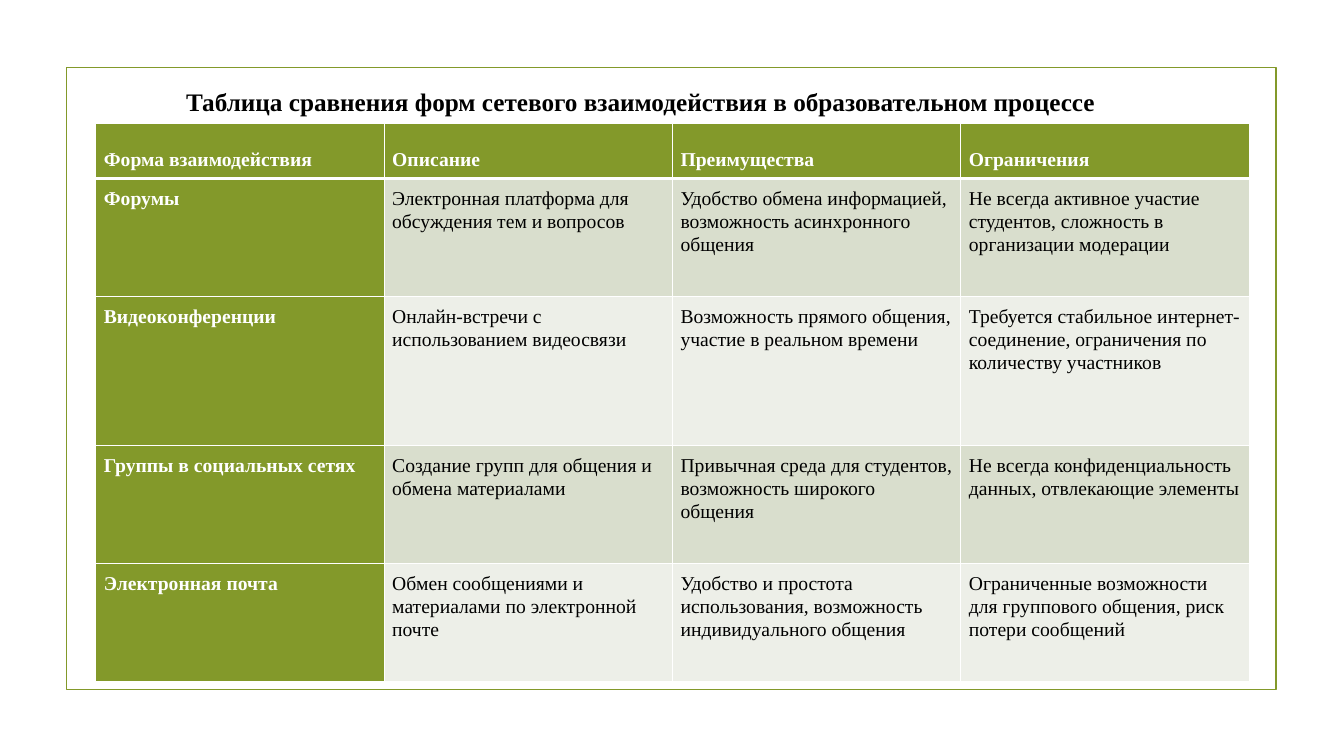
from dataclasses import dataclass

from lxml.etree import SubElement
from pptx import Presentation
from pptx.dml.color import RGBColor
from pptx.enum.shapes import MSO_SHAPE as Shape
from pptx.enum.text import MSO_ANCHOR as Anchor, MSO_AUTO_SIZE as AutoSize, PP_ALIGN as Align
from pptx.oxml.ns import qn
from pptx.util import Inches, Pt


@dataclass(frozen=True)
class Theme:
    font: str = "Times New Roman"
    olive: str = "83992A"
    bands: tuple = ("D9DECD", "EDEFE8")
    white: str = "FFFFFF"
    black: str = "000000"
    title_size: float = 18
    cell_size: float = 14
    frame_width: float = 1.25
    border_width: float = 1
    header_border_width: float = 3


THEME = Theme()

TITLE = "Таблица сравнения форм сетевого взаимодействия в образовательном процессе"
COMPARISON = [
    ["Форма взаимодействия", "Описание", "Преимущества", "Ограничения"],
    ["Форумы",
     "Электронная платформа для обсуждения тем и вопросов",
     "Удобство обмена информацией, возможность асинхронного общения",
     "Не всегда активное участие студентов, сложность в организации модерации"],
    ["Видеоконференции",
     "Онлайн-встречи с использованием видеосвязи",
     "Возможность прямого общения, участие в реальном времени",
     "Требуется стабильное интернет-соединение, ограничения по количеству участников"],
    ["Группы в социальных сетях",
     "Создание групп для общения и обмена материалами",
     "Привычная среда для студентов, возможность широкого общения",
     "Не всегда конфиденциальность данных, отвлекающие элементы"],
    ["Электронная почта",
     "Обмен сообщениями и материалами по электронной почте",
     "Удобство и простота использования, возможность индивидуального общения",
     "Ограниченные возможности для группового общения, риск потери сообщений"],
]
ROW_HEIGHTS = [0.55, 1.17, 1.48, 1.17, 1.17]
COLUMN_WIDTH = 2.86
CELL_MARGIN = 0.08


def add_run(paragraph, text, size, color, bold):
    run = paragraph.add_run()
    run.text = text
    run.font.name = THEME.font
    run.font.size = Pt(size)
    run.font.bold = bold
    run.font.color.rgb = RGBColor.from_string(color)


def add_frame(slide):
    frame = slide.shapes.add_shape(
        Shape.RECTANGLE, Inches(0.66), Inches(0.67), Inches(12), Inches(6.17))
    frame.shadow.inherit = False
    frame.fill.background()
    frame.line.color.rgb = RGBColor.from_string(THEME.olive)
    frame.line.width = Pt(THEME.frame_width)


def set_title(slide):
    title = slide.shapes.title
    title.left, title.top = Inches(1.68), Inches(0.81)
    title.width, title.height = Inches(9.35), Inches(0.4)
    text_frame = title.text_frame
    text_frame.word_wrap = True
    text_frame.auto_size = AutoSize.NONE
    text_frame.vertical_anchor = Anchor.MIDDLE
    paragraph = text_frame.paragraphs[0]
    paragraph.alignment = Align.CENTER
    add_run(paragraph, TITLE, THEME.title_size, THEME.black, True)


def add_border(cell, side, width):
    properties = cell._tc.get_or_add_tcPr()
    line = SubElement(properties, qn(f"a:ln{side}"), w=str(Pt(width)))
    fill = SubElement(line, qn("a:solidFill"))
    SubElement(fill, qn("a:srgbClr"), val=THEME.white)


def fill_cell(cell, text, row, column):
    is_header = row == 0
    is_heading = is_header or column == 0
    edge_widths = {side: THEME.border_width for side in "LRTB"}
    if is_header:
        edge_widths["B"] = THEME.header_border_width
    elif row == 1:
        edge_widths["T"] = THEME.header_border_width
    for side, width in edge_widths.items():
        add_border(cell, side, width)
    background = THEME.olive if is_heading else THEME.bands[(row - 1) % 2]
    cell.fill.solid()
    cell.fill.fore_color.rgb = RGBColor.from_string(background)
    cell.margin_left = cell.margin_right = Inches(CELL_MARGIN)
    cell.margin_top = cell.margin_bottom = Inches(CELL_MARGIN)
    cell.vertical_anchor = Anchor.BOTTOM if is_header else Anchor.TOP
    paragraph = cell.text_frame.paragraphs[0]
    paragraph.line_spacing = 1.07
    color = THEME.white if is_heading else THEME.black
    add_run(paragraph, text, THEME.cell_size, color, is_heading)


def add_comparison_table(slide):
    column_count = len(COMPARISON[0])
    table = slide.shapes.add_table(
        len(COMPARISON), column_count, Inches(0.95), Inches(1.22),
        Inches(COLUMN_WIDTH * column_count), Inches(sum(ROW_HEIGHTS))).table
    table.first_col = True
    for column in table.columns:
        column.width = Inches(COLUMN_WIDTH)
    for table_row, height in zip(table.rows, ROW_HEIGHTS):
        table_row.height = Inches(height)
    for row, texts in enumerate(COMPARISON):
        for column, text in enumerate(texts):
            fill_cell(table.cell(row, column), text, row, column)


def main():
    presentation = Presentation()
    presentation.slide_width = Inches(13.33)
    presentation.slide_height = Inches(7.5)
    slide = presentation.slides.add_slide(presentation.slide_layouts.get_by_name("Title Only"))
    add_frame(slide)
    add_comparison_table(slide)
    set_title(slide)
    presentation.save("out.pptx")


if __name__ == "__main__":
    main()
